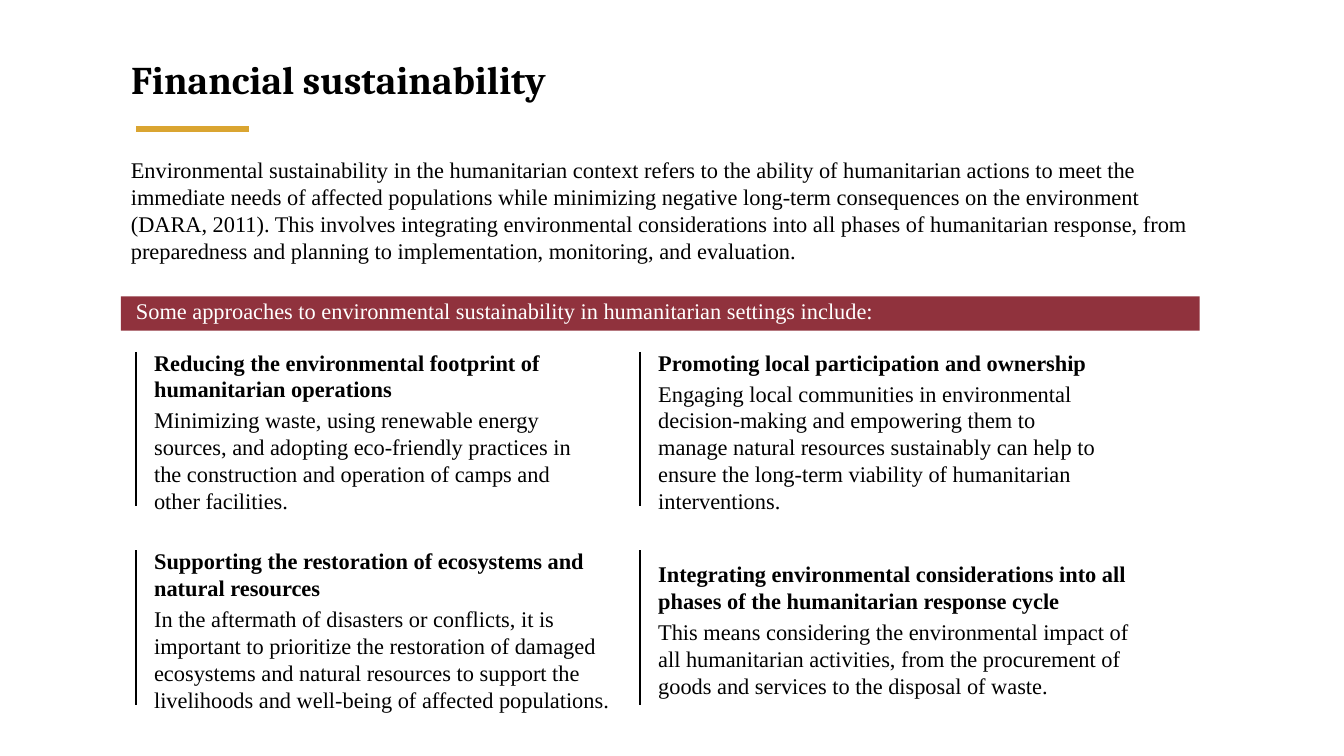
from pptx import Presentation
from pptx.dml.color import RGBColor as Rgb
from pptx.enum.shapes import MSO_CONNECTOR as Conn, MSO_SHAPE as Kind
from pptx.enum.text import MSO_ANCHOR as Anchor, MSO_AUTO_SIZE as Auto, PP_ALIGN as Align
from pptx.oxml.ns import qn
from pptx.util import Inches, Pt
from lxml import etree

INTRO = (
    "Environmental sustainability in the humanitarian context refers to the ability of "
    "humanitarian actions to meet the immediate needs of affected populations while "
    "minimizing negative long-term consequences on the environment (DARA, 2011). This "
    "involves integrating environmental considerations into all phases of humanitarian "
    "response, from preparedness and planning to implementation, monitoring, and evaluation."
)
LEAD = "Some approaches to environmental sustainability in humanitarian settings include:"

COLS = [1.35, 6.35]
ROWS = [3.49, 5.46]
CARDS = [
    ("Reducing the environmental footprint of humanitarian operations",
     "Minimizing waste, using renewable energy sources, and adopting eco-friendly "
     "practices in the construction and operation of camps and other facilities.",
     3.41, 4.61, 1.76),
    ("Promoting local participation and ownership",
     "Engaging local communities in environmental decision-making and empowering them to "
     "manage natural resources sustainably can help to ensure the long-term viability of "
     "humanitarian interventions.",
     3.41, 4.61, 1.76),
    ("Supporting the restoration of ecosystems and natural resources",
     "In the aftermath of disasters or conflicts, it is important to prioritize the "
     "restoration of damaged ecosystems and natural resources to support the livelihoods "
     "and well-being of affected populations.",
     5.38, 4.85, 1.76),
    ("Integrating environmental considerations into all phases of the humanitarian "
     "response cycle",
     "This means considering the environmental impact of all humanitarian activities, "
     "from the procurement of goods and services to the disposal of waste.",
     5.51, 5.13, 1.49),
]


def color(code):
    return Rgb.from_string(code)


def write(para, text, size=16, font="Times New Roman", tint="000000", bold=False, gap=0):
    para.alignment = Align.LEFT
    para.space_before = Pt(gap)
    run = para.add_run()
    run.text = text
    run.font.size = Pt(size)
    run.font.name = font
    run.font.bold = bold
    run.font.color.rgb = color(tint)


def frame(shape):
    body = shape.text_frame
    body.word_wrap = True
    body.auto_size = Auto.NONE
    body.vertical_anchor = Anchor.TOP
    return body


def title(slide, text, left, top, width, height):
    shape = slide.shapes.title
    shape.left, shape.top = Inches(left), Inches(top)
    shape.width, shape.height = Inches(width), Inches(height)
    write(frame(shape).paragraphs[0], text, size=28, font="Cambria", bold=True)


def box(slide, left, top, width, height):
    return frame(slide.shapes.add_textbox(
        Inches(left), Inches(top), Inches(width), Inches(height)))


def note(slide, text, left, top, width, height, **style):
    write(box(slide, left, top, width, height).paragraphs[0], text, **style)


def band(slide, left, top, width, height, fill):
    shape = slide.shapes.add_shape(
        Kind.RECTANGLE, Inches(left), Inches(top), Inches(width), Inches(height))
    shape.shadow.inherit = False
    shape.fill.solid()
    shape.fill.fore_color.rgb = color(fill)
    shape.line.fill.background()


def rule(slide, left, top, right, bottom, tint, weight):
    line = slide.shapes.add_connector(
        Conn.STRAIGHT, Inches(left), Inches(top), Inches(right), Inches(bottom))
    line.line.color.rgb = color(tint)
    line.line.width = Pt(weight)
    etree.SubElement(line._element.spPr, qn("a:effectLst"))


def card(slide, left, start, head, text, top, width, height):
    rule(slide, left, start, left, start + 1.53, "000000", 1.5)
    body = box(slide, left + 0.08, top, width, height)
    write(body.paragraphs[0], head, bold=True)
    write(body.add_paragraph(), text, gap=3)


def main():
    deck = Presentation()
    deck.slide_width, deck.slide_height = Inches(13.33), Inches(7.5)
    slide = deck.slides.add_slide(deck.slide_layouts[5])
    title(slide, "Financial sustainability", 1.2, 0.5, 10.44, 0.57)
    rule(slide, 1.35, 1.28, 2.47, 1.28, "DAA531", 4.5)
    note(slide, INTRO, 1.2, 1.5, 10.7, 1.18)
    band(slide, 1.2, 2.94, 10.7, 0.34, "90323D")
    note(slide, LEAD, 1.25, 2.9, 9.59, 0.37, tint="FFFFFF")
    for index, item in enumerate(CARDS):
        row, col = divmod(index, len(COLS))
        card(slide, COLS[col], ROWS[row], *item)
    deck.save("out.pptx")


if __name__ == "__main__":
    main()
